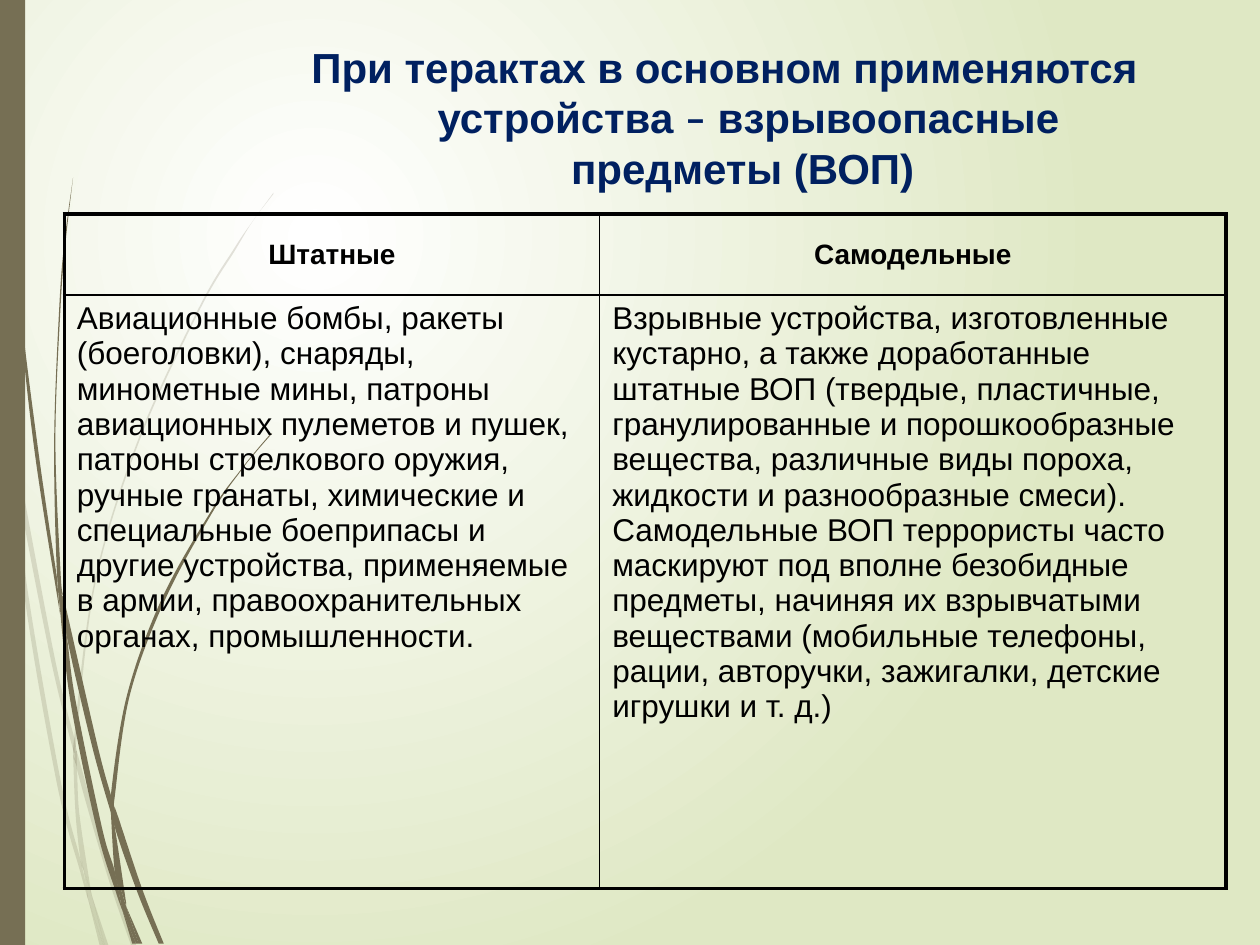
"""Build a slide with a title and a two-column table over a background of curved grass blades."""
from lxml.etree import SubElement
from pptx import Presentation
from pptx.dml.color import RGBColor
from pptx.enum.shapes import MSO_SHAPE
from pptx.enum.text import MSO_ANCHOR, MSO_AUTO_SIZE, PP_ALIGN
from pptx.oxml.ns import qn
from pptx.util import Inches, Pt

BROWN = RGBColor(0x76, 0x6F, 0x54)
NAVY = RGBColor(0x00, 0x20, 0x60)
BLACK = RGBColor(0, 0, 0)
WHITE = RGBColor(0xFF, 0xFF, 0xFF)
GREEN = RGBColor(0xDF, 0xE8, 0xC4)

TITLE = [
    ("При терактах в основном применяются устройства ", "Arial"),
    ("–", "Calibri"),
    (" взрывоопасные", "Arial"),
    "break",
    ("предметы (ВОП) ", "Arial"),
]
ROWS = [
    ("Штатные", "Самодельные"),
    (
        "Авиационные бомбы, ракеты (боеголовки), снаряды, минометные мины, патроны "
        "авиационных пулеметов и пушек, патроны стрелкового оружия, ручные гранаты, "
        "химические и специальные боеприпасы и другие устройства, применяемые в армии, "
        "правоохранительных органах, промышленности.",
        "Взрывные устройства, изготовленные кустарно, а также доработанные штатные ВОП "
        "(твердые, пластичные, гранулированные и порошкообразные вещества, различные виды "
        "пороха, жидкости и разнообразные смеси). Самодельные ВОП террористы часто маскируют "
        "под вполне безобидные предметы, начиняя их взрывчатыми веществами (мобильные "
        "телефоны, рации, авторучки, зажигалки, детские игрушки и т. д.)",
    ),
]
COL_WIDTHS = (4.25, 4.97)
ROW_HEIGHTS = (0.64, 4.71)

PALE_BLADES = [
    ([(0.08, 3.5), (0.06, 3.22), (0, 2.82)], [(0, 2.99), (0.07, 3.44), (0.08, 3.5)]),
    ([(0.1, 3.45), (0.12, 3.76), (0.4, 5.22), (0.59, 5.99)],
     [(0.59, 5.86), (0.43, 5.2), (0.1, 3.45)]),
    ([(0.61, 5.96), (0.61, 6.1), (0.85, 6.94), (1.04, 7.5)],
     [(1.08, 7.5), (0.88, 6.92), (0.64, 6.07), (0.61, 5.96)]),
    ([(0.73, 7.11), (0.83, 7.5)], [(0.86, 7.5), (0.73, 7.11)]),
    ([(0.08, 3.5), (0.19, 4.7), (0.45, 6.21), (0.64, 6.93), (0.7, 7.14)],
     [(0.69, 7.07), (0.64, 6.83), (0.48, 6.19), (0.22, 4.69), (0.12, 3.76), (0.08, 3.5)]),
    ([(0.58, 5.99), (0.6, 6.46), (0.64, 6.83), (0.67, 6.92), (0.73, 7.11)],
     [(0.72, 7.06), (0.63, 6.46), (0.61, 6.1), (0.58, 5.99)]),
    ([(0.61, 5.96), (0.61, 5.84), (0.76, 4.62), (1.11, 3.49), (1.59, 2.45), (1.87, 1.98),
      (2.01, 1.75), (2.17, 1.54)],
     [(2.17, 1.53), (2.01, 1.75), (1.86, 1.97), (1.58, 2.44), (1.1, 3.48), (0.75, 4.61),
      (0.59, 5.84), (0.61, 5.96)]),
    ([(0.7, 7.14), (0.79, 7.5)], [(0.82, 7.5), (0.7, 7.14)]),
    ([(0.61, 6.1), (0.61, 5.96)], [(0.59, 5.86), (0.58, 5.99), (0.61, 6.08)]),
    ([(0.65, 6.83), (0.69, 7.07), (0.7, 7.14), (0.82, 7.5)],
     [(0.83, 7.5), (0.73, 7.11), (0.67, 6.92), (0.65, 6.83)]),
]
DARK_BLADES = [
    ([(0.02, 0), (0.03, 0.48), (0.05, 1.1), (0.14, 2.33), (0.27, 3.55), (0.46, 4.77),
      (0.47, 4.81)],
     [(0.45, 4.57), (0.3, 3.55), (0.15, 2.32), (0.06, 1.09), (0.04, 0.48), (0.03, 0)]),
    ([(0.5, 4.72), (0.53, 5.05), (0.73, 5.92), (0.88, 6.45)],
     [(0.88, 6.31), (0.77, 5.9), (0.5, 4.72)]),
    ([(0.91, 6.41), (0.91, 6.56), (1.09, 7.08), (1.26, 7.49)],
     [(1.3, 7.49), (1.13, 7.06), (0.94, 6.49), (0.91, 6.41)]),
    ([(0.47, 4.77), (0.56, 5.57), (0.77, 6.59), (0.92, 7.08), (0.97, 7.22)],
     [(0.96, 7.17), (0.91, 6.91), (0.81, 6.57), (0.6, 5.56), (0.53, 5.05), (0.47, 4.77)]),
    ([(0.5, 4.72), (0.48, 4.53), (0.44, 3.49), (0.48, 2.45), (0.52, 1.93), (0.58, 1.41)],
     [(0.58, 1.41), (0.51, 1.93), (0.47, 2.45), (0.43, 3.49), (0.45, 4.49), (0.49, 4.72)]),
    ([(1, 7.19), (1.1, 7.49)], [(1.13, 7.49), (1, 7.19)]),
    ([(0.45, 4.49), (0.47, 4.77), (0.53, 5.05)], [(0.5, 4.72), (0.49, 4.72), (0.45, 4.49)]),
    ([(0.91, 6.41), (0.91, 6.33), (1.03, 5.52), (1.31, 4.76), (1.69, 4.06), (1.91, 3.74),
      (2.03, 3.59), (2.16, 3.44)],
     [(2.15, 3.44), (2.03, 3.58), (1.91, 3.73), (1.68, 4.05), (1.29, 4.74), (1.01, 5.51),
      (0.88, 6.31), (0.91, 6.41)]),
    ([(0.97, 7.22), (1.05, 7.49)], [(1.08, 7.49), (0.97, 7.22)]),
    ([(0.88, 6.45), (0.91, 6.91), (0.96, 7.06), (1, 7.19)],
     [(1, 7.16), (0.91, 6.56), (0.88, 6.45)]),
    ([(0.88, 6.45), (0.91, 6.56)], [(0.91, 6.41), (0.88, 6.31)]),
    ([(0.91, 6.91), (0.96, 7.17), (0.97, 7.22), (1.08, 7.49)],
     [(1.1, 7.49), (1, 7.19), (0.96, 7.06), (0.91, 6.91)]),
]


def paint(s, color):
    s.fill.solid()
    s.fill.fore_color.rgb = color
    s.line.fill.background()
    s.shadow.inherit = False


def bend(lines, edge, origin):
    """Turn the straight segments of an edge into smooth curves."""
    ends = [edge[0], *edge, edge[-1]]
    for line, p0, p1, p2, p3 in zip(lines, ends, ends[1:], ends[2:], ends[3:]):
        line.tag = qn("a:cubicBezTo")
        controls = (
            [b + (c - a) / 6 for a, b, c in zip(p0, p1, p2)],
            [c - (d - b) / 6 for b, c, d in zip(p1, p2, p3)],
        )
        for i, point in enumerate(controls):
            x, y = (str(round(v - o)) for v, o in zip(point, origin))
            line.insert(i, line.makeelement(qn("a:pt"), {"x": x, "y": y}))


def add_blade(slide, edges, alpha=None):
    edges = [[(Inches(x), Inches(y)) for x, y in edge] for edge in edges]
    outline = edges[0] + edges[1]
    builder = slide.shapes.build_freeform(*outline[0])
    builder.add_line_segments(outline[1:], close=True)
    s = builder.convert_to_shape()
    lines = s.element.xpath(".//a:lnTo")
    bend(lines, edges[0], (s.left, s.top))
    bend(lines[len(edges[0]):], edges[1], (s.left, s.top))
    paint(s, BROWN)
    if alpha:
        color = s.element.spPr.find(qn("a:solidFill"))[0]
        SubElement(color, qn("a:alpha"), val=str(alpha * 1000))


def set_background(slide):
    fill = slide.background.fill
    fill.gradient()
    for stop, color, position in zip(fill.gradient_stops, (WHITE, GREEN), (0, 1)):
        stop.color.rgb = color
        stop.position = position
    grad = slide.element.xpath(".//a:gradFill")[0]
    grad.remove(grad.find(qn("a:lin")))
    circle = SubElement(grad, qn("a:path"), path="circle")
    SubElement(circle, qn("a:fillToRect"), l="50000", t="50000", r="100000", b="100000")


def add_title(slide):
    s = slide.shapes.title
    s.left, s.top, s.width, s.height = (Inches(v) for v in (1.5, 0.28, 8.5, 1.42))
    tf = s.text_frame
    tf.word_wrap = True
    tf.auto_size = MSO_AUTO_SIZE.NONE
    tf.vertical_anchor = MSO_ANCHOR.TOP
    p = tf.paragraphs[0]
    p.alignment = PP_ALIGN.CENTER
    p.space_before = Pt(10)
    pPr = p._p.get_or_add_pPr()
    pPr.set("marL", str(Inches(0.38)))
    pPr.set("indent", str(Inches(-0.38)))
    for part in TITLE:
        if part == "break":
            p.add_line_break()
            continue
        r = p.add_run()
        r.text, r.font.name = part
        r.font.size, r.font.bold = Pt(24), True
        r.font.color.rgb = NAVY


def set_borders(cell, widths):
    tcPr = cell._tc.get_or_add_tcPr()
    for i, (side, width) in enumerate(widths.items()):
        ln = tcPr.makeelement(qn(f"a:ln{side}"), {"w": str(Pt(width))})
        fill = SubElement(ln, qn("a:solidFill"))
        SubElement(fill, qn("a:srgbClr"), val=str(BLACK))
        tcPr.insert(i, ln)


def add_table(slide):
    size = Inches(sum(COL_WIDTHS)), Inches(sum(ROW_HEIGHTS))
    table = slide.shapes.add_table(2, 2, Inches(0.51), Inches(1.7), *size).table
    table.first_row = table.horz_banding = False
    for column, width in zip(table.columns, COL_WIDTHS):
        column.width = Inches(width)
    for row, height in zip(table.rows, ROW_HEIGHTS):
        row.height = Inches(height)
    for i, texts in enumerate(ROWS):
        header = i == 0
        for j, text in enumerate(texts):
            cell = table.cell(i, j)
            cell.fill.background()
            outer = {"L": j == 0, "R": j == 1, "T": header, "B": not header}
            set_borders(cell, {side: 2.25 if on else 1 for side, on in outer.items()})
            cell.vertical_anchor = MSO_ANCHOR.MIDDLE if header else MSO_ANCHOR.TOP
            p = cell.text_frame.paragraphs[0]
            p.alignment = PP_ALIGN.CENTER if header else PP_ALIGN.LEFT
            r = p.add_run()
            r.text = text
            r.font.name, r.font.bold = "Arial", header
            r.font.size = Pt(16 if header else 18)
            r.font.color.rgb = BLACK


def main():
    prs = Presentation()
    prs.slide_width, prs.slide_height = Inches(10), Inches(7.5)
    slide = prs.slides.add_slide(prs.slide_layouts[5])
    set_background(slide)
    for edges in PALE_BLADES:
        add_blade(slide, edges, alpha=20)
    for edges in DARK_BLADES:
        add_blade(slide, edges)
    paint(slide.shapes.add_shape(MSO_SHAPE.RECTANGLE, 0, 0, Inches(0.2), Inches(7.5)), BROWN)
    add_title(slide)
    add_table(slide)
    prs.save("out.pptx")


if __name__ == "__main__":
    main()
